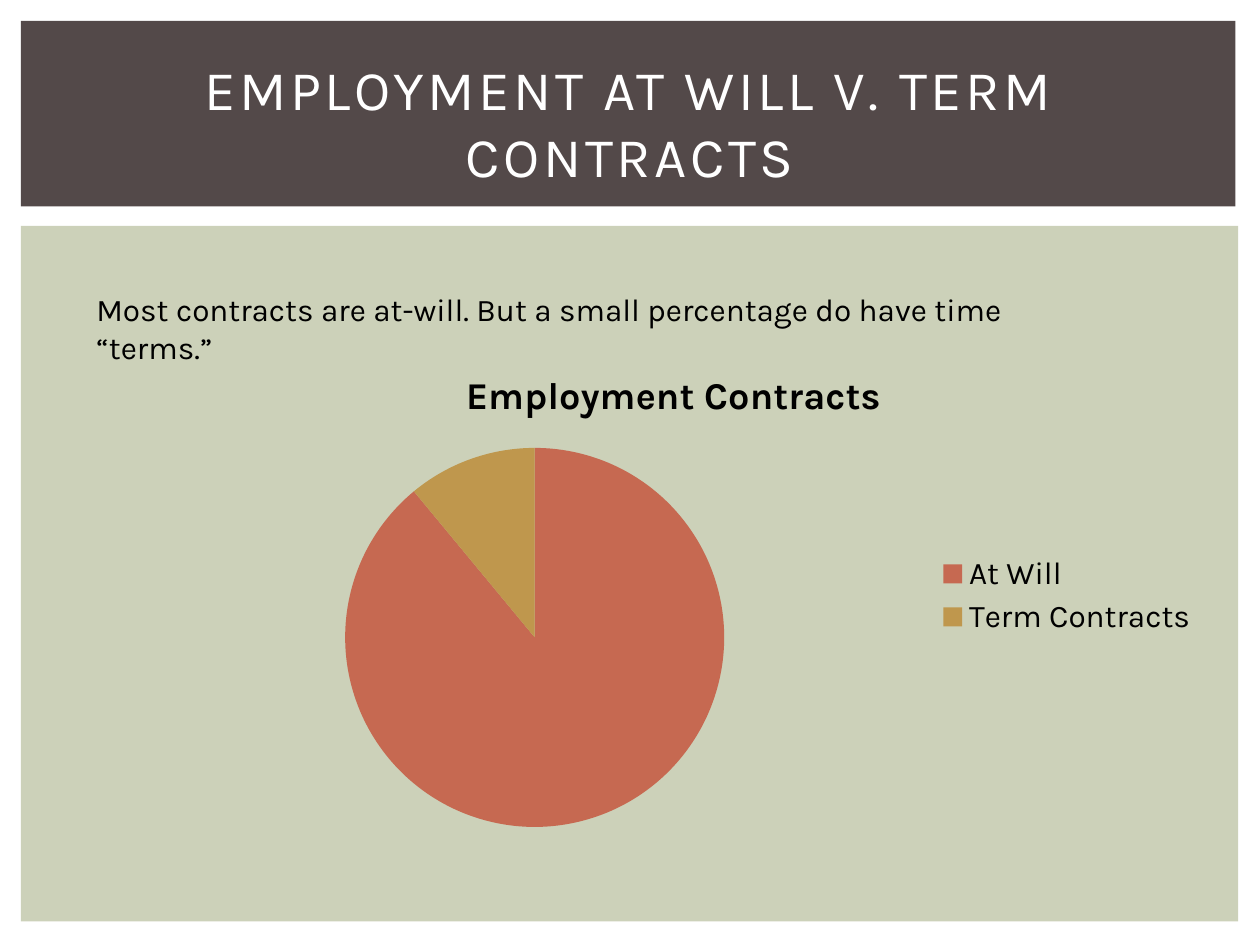
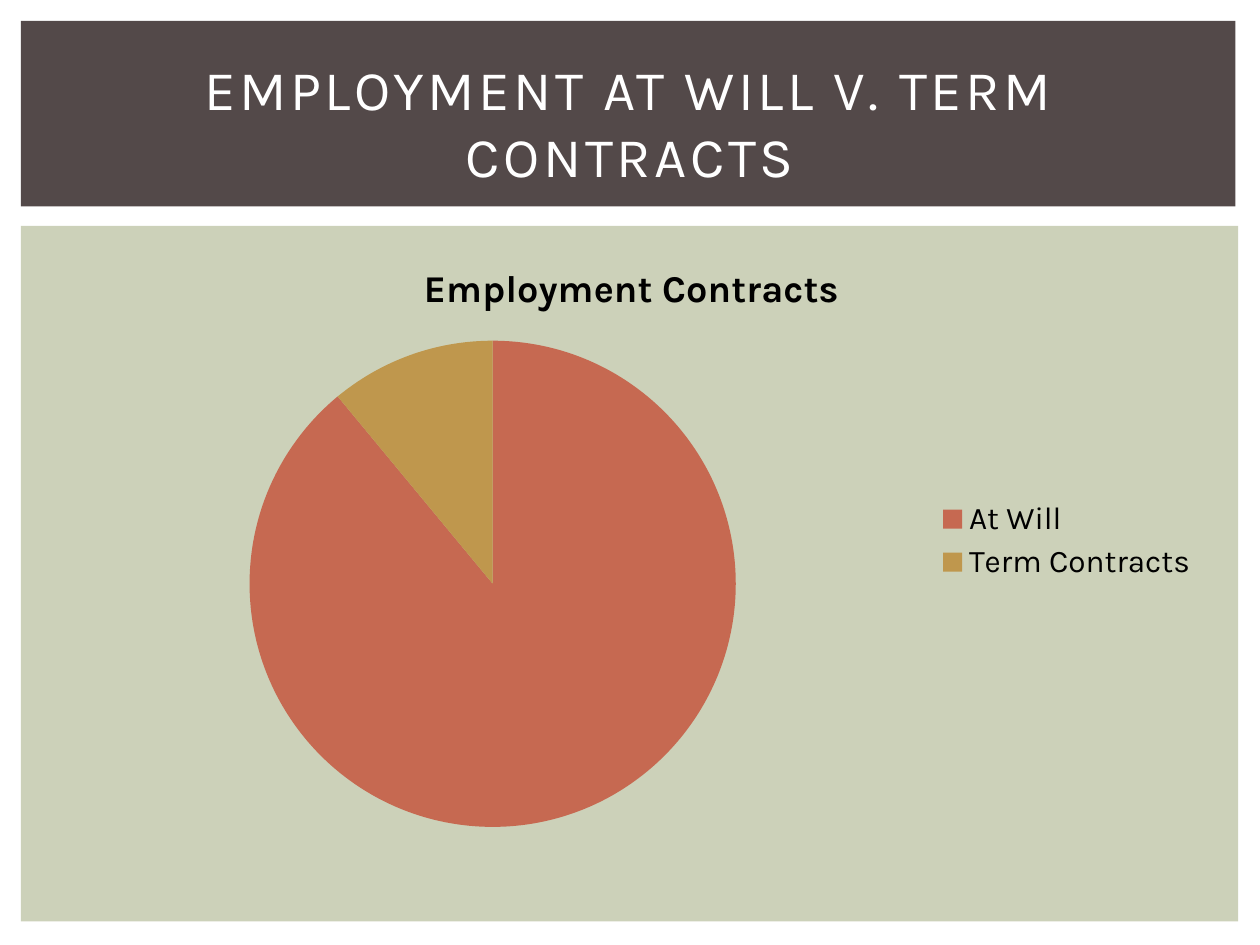
"""Build two slides on at-will and term employment contracts."""
from pptx import Presentation
from pptx.chart.data import CategoryChartData
from pptx.dml.color import RGBColor
from pptx.enum import chart as ch, shapes, text as tx
from pptx.util import Pt

FONT = "Karla"
BLACK = RGBColor(0x00, 0x00, 0x00)
WHITE = RGBColor(0xFF, 0xFF, 0xFF)
SAGE = RGBColor(0xCC, 0xD1, 0xB9)
BROWN = RGBColor(0x53, 0x49, 0x49)
RUST = RGBColor(0xC6, 0x69, 0x51)
GOLD = RGBColor(0xBF, 0x97, 0x4D)

TITLE = "EMPLOYMENT AT WILL V. TERM CONTRACTS"
NOTE = "Most contracts are at-will. But a small percentage do have time “terms.”"
SHARES = {"At Will": (89, RUST), "Term Contracts": (11, GOLD)}


def place(*box):
    return [Pt(side) for side in box]


def style(font, size, color=BLACK, bold=False):
    font.name, font.size, font.bold = FONT, Pt(size), bold
    font.color.rgb = color


def add_band(slide, box, color):
    band = slide.shapes.add_shape(shapes.MSO_SHAPE.RECTANGLE, *place(*box))
    band.shadow.inherit = False
    band.fill.solid()
    band.fill.fore_color.rgb = color
    band.line.fill.background()


def add_text(slide, words, box, size=18, color=BLACK, align=tx.PP_ALIGN.LEFT,
             anchor=tx.MSO_ANCHOR.TOP, fit=tx.MSO_AUTO_SIZE.NONE, gap=0):
    frame = slide.shapes.add_textbox(*place(*box)).text_frame
    frame.word_wrap = True
    frame.auto_size = fit
    frame.vertical_anchor = anchor
    para = frame.paragraphs[0]
    para.alignment = align
    run = para.add_run()
    run.text = words
    style(run.font, size, color)
    if gap:
        run.font._element.set("spc", str(gap * 100))


def add_pie(slide, box):
    data = CategoryChartData()
    data.categories = list(SHARES)
    data.add_series("Employment Contracts", [share for share, _ in SHARES.values()])
    frame = slide.shapes.add_chart(ch.XL_CHART_TYPE.PIE, *place(*box), data)
    chart = frame.chart
    style(chart.font, 18)

    chart.has_title = True
    chart.chart_title.include_in_layout = False
    head = chart.chart_title.text_frame
    head.text = "Employment Contracts"
    style(head.paragraphs[0].runs[0].font, 21.6, bold=True)

    chart.has_legend = True
    chart.legend.position = ch.XL_LEGEND_POSITION.RIGHT
    chart.legend.include_in_layout = False
    style(chart.legend.font, 18)

    plot = chart.plots[0]
    plot.vary_by_categories = True
    for i, (_, color) in enumerate(SHARES.values()):
        fill = plot.series[0].points[i].format.fill
        fill.solid()
        fill.fore_color.rgb = color


def add_slide(deck, pie_box):
    slide = deck.slides.add_slide(deck.slide_layouts[6])
    add_band(slide, (12, 129, 695.5, 397.5), SAGE)
    add_band(slide, (12, 12, 694, 106), BROWN)
    add_pie(slide, pie_box)
    add_text(slide, TITLE, (30, 28, 660, 83), size=32, color=WHITE,
             align=tx.PP_ALIGN.CENTER, anchor=tx.MSO_ANCHOR.MIDDLE, gap=2)
    return slide


def main():
    deck = Presentation()
    deck.slide_width, deck.slide_height = Pt(720), Pt(540)
    first = add_slide(deck, (78, 198, 614, 284.5))
    add_text(first, NOTE, (48, 162, 573, 29), fit=tx.MSO_AUTO_SIZE.SHAPE_TO_FIT_TEXT)
    add_slide(deck, (30, 135.5, 662, 347))
    deck.save("out.pptx")


if __name__ == "__main__":
    main()
